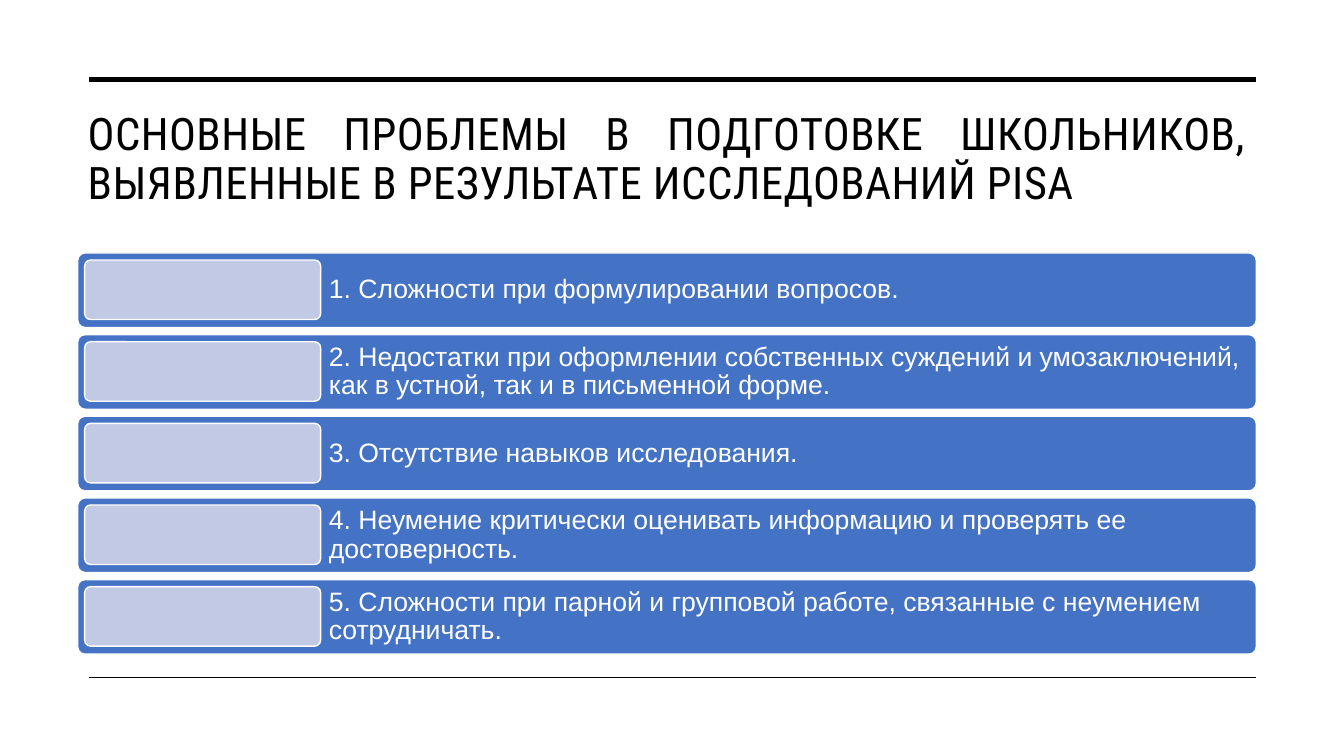
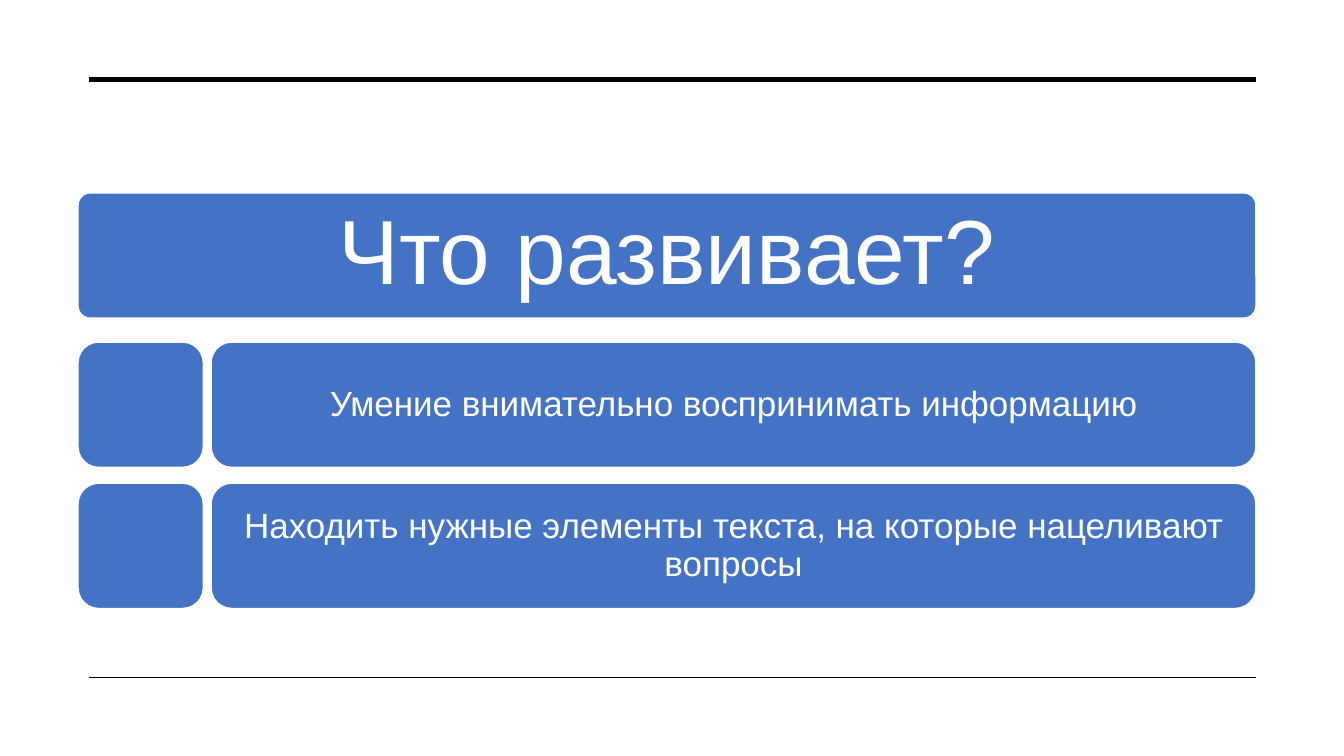
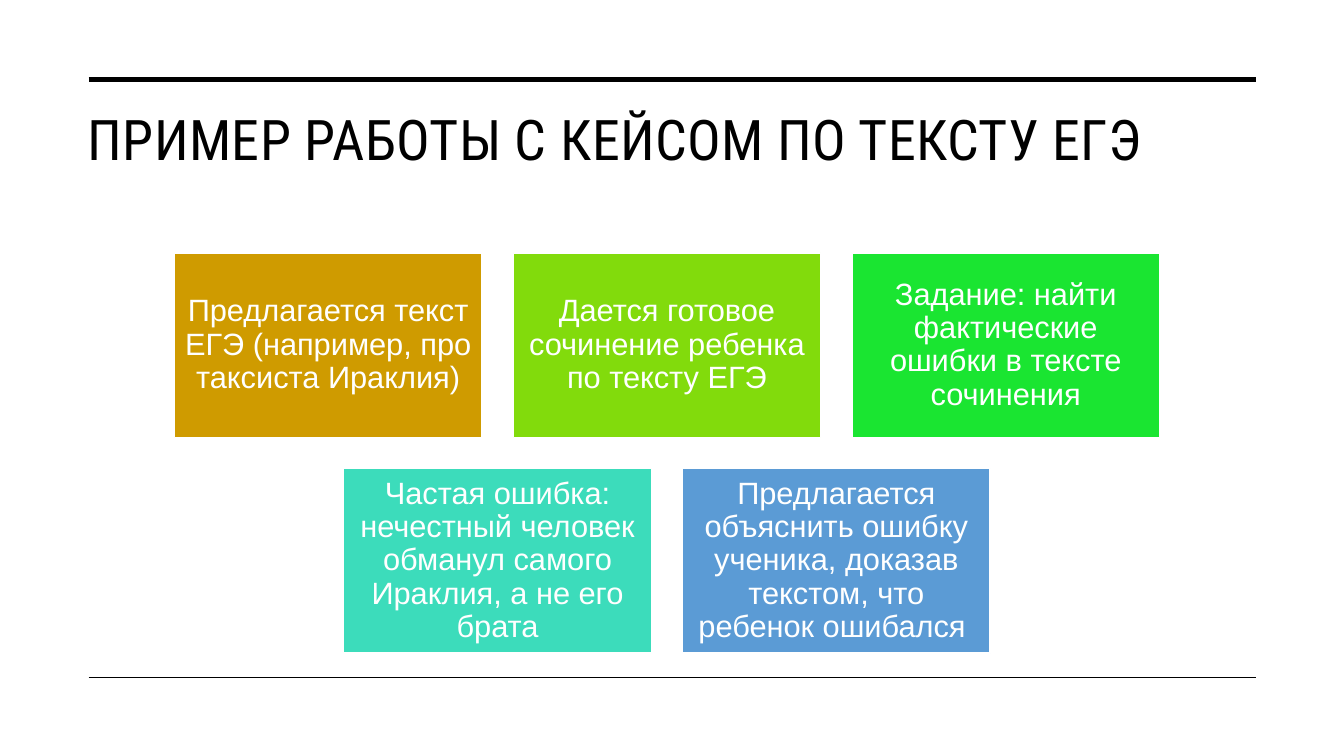
"""Build three slides on reading skills, framed by two shared rules."""
from lxml import etree
from pptx import Presentation
from pptx.dml.color import RGBColor
from pptx.enum import shapes, text
from pptx.oxml.ns import qn
from pptx.util import Inches, Pt

HUES = {
    "ink": "000000", "white": "FFFFFF", "blue": "4472C4", "pale": "C1C9E4",
    "gold": "CF9B00", "lime": "82DB0C", "green": "1AE531",
    "teal": "3CDCBB", "sky": "5B9BD5",
}
LEFT, WIDTH = 0.77, 11.69
RULES = [(0.79, 3.5), (6.72, 1)]
ROUND = shapes.MSO_SHAPE.ROUNDED_RECTANGLE
RECT = shapes.MSO_SHAPE.RECTANGLE
ALIGN = text.PP_ALIGN

ISSUES_TITLE = "ОСНОВНЫЕ ПРОБЛЕМЫ В ПОДГОТОВКЕ ШКОЛЬНИКОВ, ВЫЯВЛЕННЫЕ В РЕЗУЛЬТАТЕ ИССЛЕДОВАНИЙ PISA"
ISSUES = [
    "1. Сложности при формулировании вопросов.",
    "2. Недостатки при оформлении собственных суждений и умозаключений, как в устной, так и в письменной форме.",
    "3. Отсутствие навыков исследования.",
    "4. Неумение критически оценивать информацию и проверять ее достоверность.",
    "5. Сложности при парной и групповой работе, связанные с неумением сотрудничать.",
]
SKILLS_HEAD = "Что развивает?"
SKILLS = [
    "Умение внимательно воспринимать информацию",
    "Находить нужные элементы текста, на которые нацеливают вопросы",
]
CASE_TITLE = "ПРИМЕР РАБОТЫ С КЕЙСОМ ПО ТЕКСТУ ЕГЭ"
CASE_ROWS = [
    [("Предлагается текст ЕГЭ (например, про таксиста Ираклия)", "gold"),
     ("Дается готовое сочинение ребенка по тексту ЕГЭ", "lime"),
     ("Задание: найти фактические ошибки в тексте сочинения", "green")],
    [("Частая ошибка: нечестный человек обманул самого Ираклия, а не его брата", "teal"),
     ("Предлагается объяснить ошибку ученика, доказав текстом, что ребенок ошибался ", "sky")],
]


def hue(name):
    return RGBColor.from_string(HUES[name])


def style(par, face, size, color, align):
    par.font.name = face
    par.font.size = Pt(size)
    par.font.color.rgb = hue(color)
    par.alignment = align
    par.line_spacing = 0.9


def pad(frame, left, top, right, bottom):
    frame.margin_left, frame.margin_top = Inches(left), Inches(top)
    frame.margin_right, frame.margin_bottom = Inches(right), Inches(bottom)


def start(prs, title=None, size=40, align=ALIGN.LEFT):
    slide = prs.slides.add_slide(prs.slide_layouts[5 if title else 6])
    for y, weight in RULES:
        rule = slide.shapes.add_connector(
            shapes.MSO_CONNECTOR.STRAIGHT,
            Inches(0.88), Inches(y), Inches(12.46), Inches(y))
        rule.line.color.rgb = hue("ink")
        rule.line.width = Pt(weight)
        etree.SubElement(rule._element.spPr, qn("a:effectLst"))
    if title:
        head = slide.shapes.title
        head.left, head.top = Inches(LEFT), Inches(1.01)
        head.width, head.height = Inches(WIDTH), Inches(1.5)
        frame = head.text_frame
        frame.text = title
        frame.word_wrap = True
        frame.auto_size = text.MSO_AUTO_SIZE.NONE
        frame.vertical_anchor = text.MSO_ANCHOR.TOP
        pad(frame, 0.1, 0.1, 0.1, 0.05)
        par = frame.paragraphs[0]
        style(par, "Roboto Condensed", size, "ink", align)
        par.font._element.set("spc", "30")
    return slide


def box(slide, kind, x, y, w, h, fill="blue", line=1, curve=0.1,
        label="", size=19, pads=(0.09,) * 4, align=ALIGN.CENTER):
    shape = slide.shapes.add_shape(kind, Inches(x), Inches(y), Inches(w), Inches(h))
    shape.shadow.inherit = False
    shape.fill.solid()
    shape.fill.fore_color.rgb = hue(fill)
    shape.line.color.rgb = hue("white")
    shape.line.width = Pt(line)
    if kind == ROUND:
        shape.adjustments[0] = curve
    if label:
        frame = shape.text_frame
        frame.text = label
        frame.word_wrap = True
        frame.vertical_anchor = text.MSO_ANCHOR.MIDDLE
        pad(frame, *pads)
        style(frame.paragraphs[0], "Arial", size, "white", align)


def issues(prs):
    slide = start(prs, ISSUES_TITLE, 32, ALIGN.JUSTIFY)
    for row, label in enumerate(ISSUES):
        y = 2.51 + row * 0.81
        box(slide, ROUND, LEFT, y, WIDTH, 0.74, label=label,
            pads=(2.47, 0.06, 0.06, 0.06), align=ALIGN.LEFT)
        box(slide, ROUND, LEFT + 0.07, y + 0.07, 2.34, 0.59, "pale")


def skills(prs):
    slide = start(prs)
    side, gap = 1.25, 0.07
    box(slide, ROUND, LEFT, 1.91, WIDTH, side, line=1.5, label=SKILLS_HEAD,
        size=65, pads=(0.14, 0.09, 0.14, 0.09))
    for row, label in enumerate(SKILLS):
        y = 3.39 + row * 1.4
        box(slide, ROUND, LEFT, y, side, side, line=1.5, curve=0.167)
        box(slide, ROUND, LEFT + side + gap, y, WIDTH - side - gap, side,
            line=1.5, curve=0.167, label=label, size=25, pads=(0.19,) * 4)


def case(prs):
    slide = start(prs, CASE_TITLE)
    wide, high, gap = 3.05, 1.83, 0.31
    for row, cards in enumerate(CASE_ROWS):
        span = len(cards) * (wide + gap) - gap
        x = LEFT + (WIDTH - span) / 2
        y = 2.51 + row * (high + gap)
        for col, (label, fill) in enumerate(cards):
            box(slide, RECT, x + col * (wide + gap), y, wide, high, fill,
                label=label, size=22)


def main():
    prs = Presentation()
    prs.slide_width, prs.slide_height = Inches(13.33), Inches(7.5)
    issues(prs)
    skills(prs)
    case(prs)
    prs.save("out.pptx")


if __name__ == "__main__":
    main()
